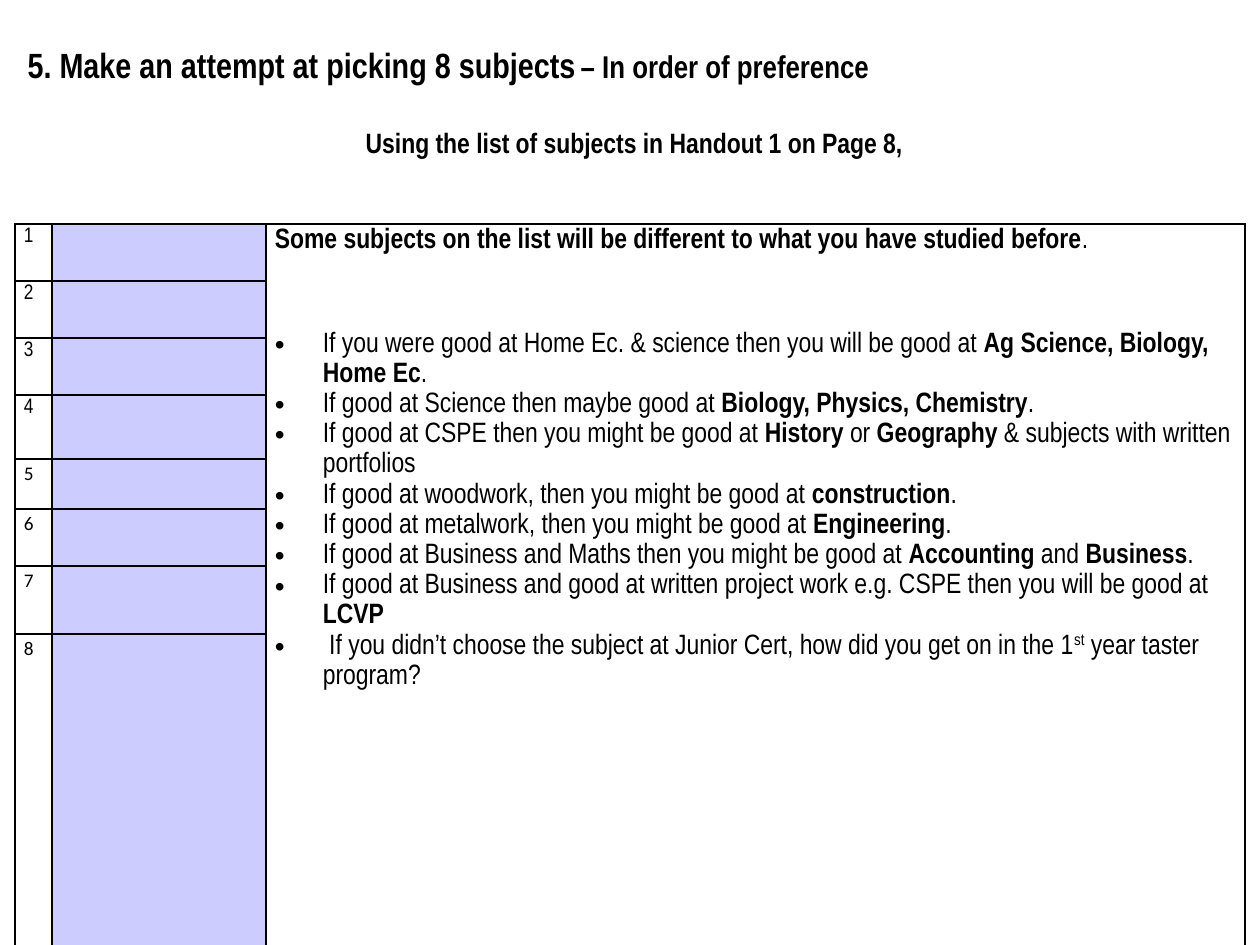
from lxml.etree import SubElement
from pptx import Presentation
from pptx.dml.color import RGBColor
from pptx.enum.text import MSO_ANCHOR, MSO_AUTO_SIZE, PP_ALIGN
from pptx.oxml.ns import qn
from pptx.util import Emu, Pt

SCALE = 914400 // 126
NARROW = "Arial Narrow"
COLS = [37, 214, 979]
ROWS = [57, 57, 57, 64, 50, 57, 68, 292]
# Bold parts stand between bars
HINTS = [
    "If you were good at Home Ec. & science then you will be good at "
    "|Ag Science, Biology, Home Ec|.",
    "If good at Science then maybe good at| Biology, Physics, Chemistry|.",
    "If good at CSPE then you might be good at |History| or |Geography"
    "| & subjects with written portfolios",
    "If good at woodwork, then you might be good at |construction|.",
    "If good at metalwork, then you might be good at |Engineering|.",
    "If good at Business and Maths then you might be good at "
    "|Accounting| and |Business|.",
    "If good at Business and good at written project work e.g. CSPE "
    "then you will be good at |LCVP",
]


def px(n):
    return Emu(n * SCALE)


def color(code):
    return RGBColor.from_string(code)


def add_run(para, text, size, bold=False, font=NARROW, raised=False):
    run = para.add_run()
    run.text = text
    run.font.size = Pt(size)
    run.font.bold = bold
    run.font.name = font
    run.font.color.rgb = color("000000")
    if raised:
        run.font._element.set("baseline", "30000")


def add_title(slide, left, top, width, height):
    shape = slide.shapes.title
    shape.left, shape.top = px(left), px(top)
    shape.width, shape.height = px(width), px(height)
    frame = shape.text_frame
    frame.word_wrap = True
    frame.auto_size = MSO_AUTO_SIZE.NONE
    frame.vertical_anchor = MSO_ANCHOR.TOP
    frame.margin_top = px(17)
    head = frame.paragraphs[0]
    head.alignment = PP_ALIGN.LEFT
    add_run(head, "5. Make an attempt at picking 8 subjects", 20, True)
    add_run(head, " ", 12, True)
    add_run(head, "– In order of preference", 18, True)
    note = frame.add_paragraph()
    note.alignment = PP_ALIGN.CENTER
    note.space_before = Pt(23)
    add_run(note, "Using the list of subjects in Handout 1 on Page 8, ", 16, True)


def style_cell(cell, fill):
    cell.margin_left = cell.margin_right = px(9)
    cell.margin_top = cell.margin_bottom = 0
    props = cell._tc.get_or_add_tcPr()
    for side in ("lnL", "lnR", "lnT", "lnB"):
        line = SubElement(props, qn(f"a:{side}"), w=str(Pt(1)))
        paint = SubElement(line, qn("a:solidFill"))
        SubElement(paint, qn("a:srgbClr"), val="000000")
    if fill:
        cell.fill.solid()
        cell.fill.fore_color.rgb = color(fill)
    else:
        cell.fill.background()


def add_hint(frame):
    para = frame.add_paragraph()
    para.line_spacing = 1.15
    props = para._p.get_or_add_pPr()
    props.set("marL", str(px(48)))
    props.set("indent", str(px(-48)))
    SubElement(props, qn("a:buFont"), typeface="Arial")
    SubElement(props, qn("a:buChar"), char="•")
    return para


def fill_hints(frame):
    head = frame.paragraphs[0]
    head.line_spacing = 1.15
    head.space_after = Pt(42)
    add_run(head, "Some subjects on the list will be different to what "
            "you have studied before", 16, True)
    add_run(head, ".", 16)
    for hint in HINTS:
        para = add_hint(frame)
        for i, part in enumerate(hint.split("|")):
            add_run(para, part, 16, i % 2 == 1)
    last = add_hint(frame)
    add_run(last, " If you didn’t choose the subject at Junior Cert, "
            "how did you get on in the 1", 16)
    add_run(last, "st", 16, raised=True)
    add_run(last, " year taster program?", 16)


def add_grid(slide, left, top):
    table = slide.shapes.add_table(
        len(ROWS), len(COLS), px(left), px(top),
        px(sum(COLS)), px(sum(ROWS))).table
    table.first_row = table.horz_banding = False
    for col, width in zip(table.columns, COLS):
        col.width = px(width)
    for i, height in enumerate(ROWS):
        table.rows[i].height = px(height)
        for j, fill in enumerate([None, "CCCCFF", None]):
            style_cell(table.cell(i, j), fill)
        # Rank number
        para = table.cell(i, 0).text_frame.paragraphs[0]
        para.line_spacing = 1.15
        size, font = (12, NARROW) if i < 4 else (11, "Calibri")
        add_run(para, str(i + 1), size, font=font)
    # One tall cell for the advice
    advice = table.cell(0, 2)
    advice.merge(table.cell(len(ROWS) - 1, 2))
    fill_hints(advice.text_frame)


def main():
    deck = Presentation()
    deck.slide_width, deck.slide_height = px(1260), px(945)
    slide = deck.slides.add_slide(deck.slide_layouts[5])
    add_grid(slide, 15, 224)
    add_title(slide, 15, 26, 1245, 161)
    deck.save("out.pptx")


if __name__ == "__main__":
    main()
